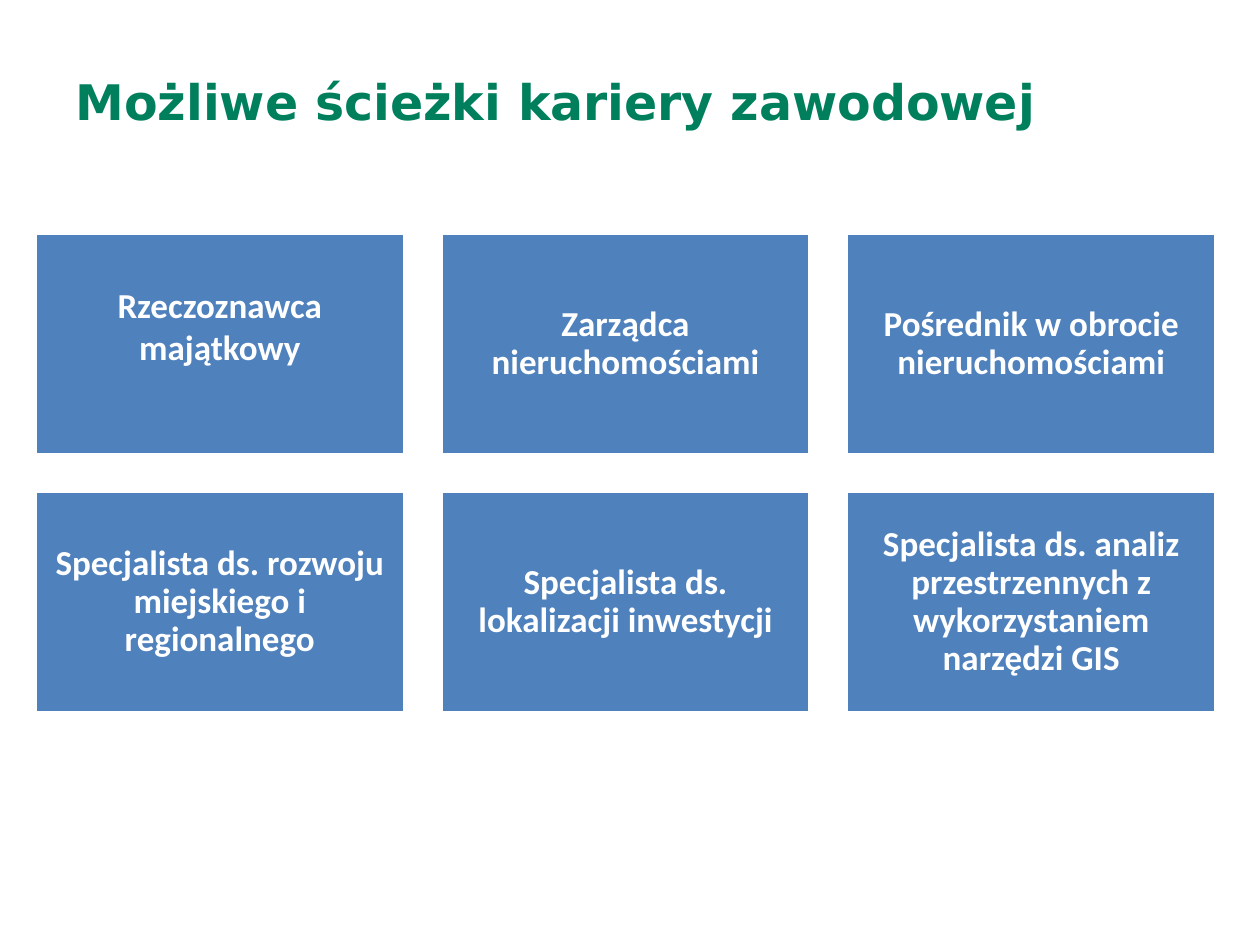
from pptx import Presentation
from pptx.dml.color import RGBColor
from pptx.enum.shapes import MSO_SHAPE
from pptx.enum.text import MSO_ANCHOR, PP_ALIGN
from pptx.util import Inches, Pt

COLORS = {"title": "007F5D", "card": "4F81BD", "white": "FFFFFF"}

CAREERS = [
    "Rzeczoznawca majątkowy",
    "Zarządca nieruchomościami",
    "Pośrednik w obrocie nieruchomościami",
    "Specjalista ds. rozwoju miejskiego i regionalnego",
    "Specjalista ds. lokalizacji inwestycji",
    "Specjalista ds. analiz przestrzennych z wykorzystaniem narzędzi GIS",
]

# Card grid, in inches
COLUMNS = 3
GRID_LEFT, GRID_TOP = 0.28, 1.85
CARD_WIDTH, CARD_HEIGHT = 2.93, 1.76
GAP = 0.29
INSET = 0.08


def color(name):
    return RGBColor.from_string(COLORS[name])


def style_font(paragraph, name, size, color_name):
    font = paragraph.font
    font.name = name
    font.size = Pt(size)
    font.bold = True
    font.color.rgb = color(color_name)


def add_title(slide, text):
    title = slide.shapes.title
    title.left, title.top = Inches(0.5), Inches(0.3)
    title.width, title.height = Inches(9), Inches(1.01)
    frame = title.text_frame
    frame.text = text
    frame.vertical_anchor = MSO_ANCHOR.MIDDLE
    paragraph = frame.paragraphs[0]
    paragraph.alignment = PP_ALIGN.LEFT
    style_font(paragraph, "DejaVu Sans", 28, "title")


def add_card(slide, left, top, text, line_spacing=0.9, bottom_inset=INSET):
    card = slide.shapes.add_shape(
        MSO_SHAPE.RECTANGLE, Inches(left), Inches(top),
        Inches(CARD_WIDTH), Inches(CARD_HEIGHT))
    card.shadow.inherit = False
    card.fill.solid()
    card.fill.fore_color.rgb = color("card")
    card.line.color.rgb = color("white")
    card.line.width = Pt(2)

    frame = card.text_frame
    frame.word_wrap = True
    frame.vertical_anchor = MSO_ANCHOR.MIDDLE
    frame.margin_left = frame.margin_right = frame.margin_top = Inches(INSET)
    frame.margin_bottom = Inches(bottom_inset)
    frame.text = text
    paragraph = frame.paragraphs[0]
    paragraph.alignment = PP_ALIGN.CENTER
    paragraph.line_spacing = line_spacing
    style_font(paragraph, "Calibri", 20, "white")


def add_cards(slide, careers):
    for index, career in enumerate(careers):
        row, column = divmod(index, COLUMNS)
        left = GRID_LEFT + column * (CARD_WIDTH + GAP)
        top = GRID_TOP + row * (CARD_HEIGHT + GAP)
        # The first card's text is looser and sits a little higher
        options = {"line_spacing": 1.0, "bottom_inset": 0.38} if index == 0 else {}
        add_card(slide, left, top, career, **options)


def main():
    presentation = Presentation()
    presentation.slide_width = Inches(10)
    presentation.slide_height = Inches(7.5)
    title_only = presentation.slide_layouts[5]
    slide = presentation.slides.add_slide(title_only)

    add_title(slide, "Możliwe ścieżki kariery zawodowej")
    add_cards(slide, CAREERS)

    presentation.save("out.pptx")


if __name__ == "__main__":
    main()
